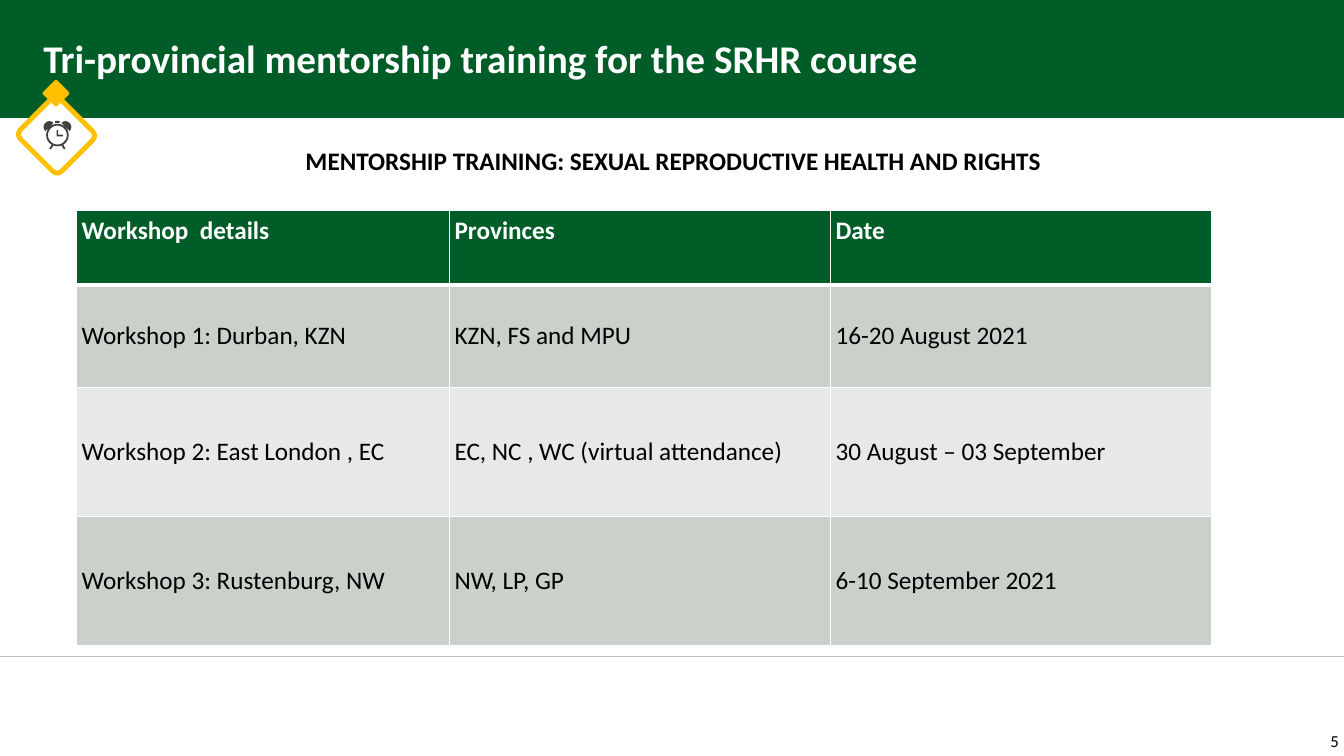
from math import cos, radians, sin

from lxml.etree import SubElement
from pptx import Presentation
from pptx.dml.color import RGBColor
from pptx.enum.shapes import MSO_CONNECTOR, MSO_SHAPE as Preset
from pptx.enum.text import MSO_ANCHOR as Anchor, PP_ALIGN as Align
from pptx.oxml.ns import qn
from pptx.util import Inches, Pt

COLORS = {key: RGBColor.from_string(value) for key, value in {
    "green": "005D28", "white": "FFFFFF", "black": "000000", "rule": "BFBFBF",
    "amber": "FFC000", "clock": "404040", "dark band": "CAD1CB", "light band": "E6E9E7",
}.items()}
INSET = Inches(0.05)

deck = Presentation()
deck.slide_width, deck.slide_height = Inches(13.33), Inches(7.5)
# The slide is a grid of 100 columns by 100 rows.
COL, ROW = deck.slide_width / 100, deck.slide_height / 100
slide = deck.slides.add_slide(deck.slide_layouts[6])
shapes = slide.shapes


def write(frame, text, size=18, color="black", bold=False, align=Align.LEFT,
          anchor=Anchor.TOP, wrap=True):
    frame.word_wrap = wrap
    frame.vertical_anchor = anchor
    frame.margin_left = frame.margin_right = INSET
    frame.margin_top = frame.margin_bottom = INSET
    paragraph = frame.paragraphs[0]
    paragraph.alignment = align
    run = paragraph.add_run()
    run.text = text
    run.font.name, run.font.size, run.font.bold = "Calibri", Pt(size), bold
    run.font.color.rgb = COLORS[color]


def arc(x, y, radius, start=0, end=360):
    """Points along a circle, angles in degrees clockwise from the right."""
    steps = 24
    angles = [radians(start + (end - start) * i / steps) for i in range(steps + 1)]
    return [(x + radius * cos(a), y + radius * sin(a)) for a in angles]


# Header band and footer rule
band = shapes.add_shape(Preset.RECTANGLE, 0, 0, deck.slide_width, int(15.6 * ROW))
band.shadow.inherit = False
band.fill.solid()
band.fill.fore_color.rgb = COLORS["green"]
band.line.fill.background()

rule_y = int(86.8 * ROW)
rule = shapes.add_connector(MSO_CONNECTOR.STRAIGHT, 0, rule_y, deck.slide_width, rule_y)
rule.line.color.rgb, rule.line.width = COLORS["rule"], Pt(0.75)
SubElement(rule._element.spPr, qn("a:effectLst"))

# Page number, title and table heading
for text, (left, top, width, height), look in [
    ("5", (98.5, 96.4, 1.5, 3.6),
     dict(size=12, align=Align.RIGHT, anchor=Anchor.BOTTOM, wrap=False)),
    ("Tri-provincial mentorship training for the SRHR course", (2.85, 0, 93.6, 15.33),
     dict(size=28, color="white", bold=True, anchor=Anchor.MIDDLE)),
    ("MENTORSHIP TRAINING: SEXUAL REPRODUCTIVE HEALTH AND RIGHTS", (5.7, 18.53, 88.8, 4.8),
     dict(bold=True, align=Align.CENTER)),
]:
    box = shapes.add_textbox(int(left * COL), int(top * ROW), int(width * COL), int(height * ROW))
    write(box.text_frame, text, **look)

# Diamond badge
for preset, (left, top, width, height), fill, weight in [
    (Preset.ROUNDED_RECTANGLE, (2.03, 14.13, 4.35, 7.47), "white", 3.5),
    (Preset.RECTANGLE, (3.53, 11.2, 1.28, 2.27), "amber", 2),
]:
    diamond = shapes.add_shape(preset, int(left * COL), int(top * ROW),
                               int(width * COL), int(height * ROW))
    diamond.shadow.inherit = False
    diamond.rotation = 45
    diamond.fill.solid()
    diamond.fill.fore_color.rgb = COLORS[fill]
    diamond.line.color.rgb, diamond.line.width = COLORS["amber"], Pt(weight)
    if preset == Preset.ROUNDED_RECTANGLE:
        diamond.adjustments[0] = 0.11

# Alarm clock, drawn in thousandths of an inch around the centre of its face
clock_x, clock_y = 570, 1340
clock_parts = [
    arc(0, 0, 112),
    arc(0, 0, 94),
    [(-8, -50), (8, -50), (8, -4), (54, -4), (54, 14), (-8, 14)],
    [(-22, -120), (-22, -140), (22, -140), (22, -120)],
    arc(-80, -80, 57, -45, -225),
    arc(80, -80, 57, -135, 45),
] + [[(side * 60, 98), (side * 82, 140), (side * 62, 140), (side * 42, 108)] for side in (-1, 1)]
outline = None
for part in clock_parts:
    points = [(clock_x + x, clock_y + y) for x, y in part]
    if outline is None:
        outline = shapes.build_freeform(*points[0], scale=Inches(1) / 1000)
    else:
        outline.move_to(*points[0])
    outline.add_line_segments(points[1:], close=True)
clock = outline.convert_to_shape()
clock.shadow.inherit = False
clock.fill.solid()
clock.fill.fore_color.rgb = COLORS["clock"]
clock.line.fill.background()

# Workshop table
workshops = [
    ("Workshop  details", "Provinces", "Date"),
    ("Workshop 1: Durban, KZN", "KZN, FS and MPU", "16-20 August 2021"),
    ("Workshop 2: East London , EC", "EC, NC , WC (virtual attendance)", "30 August – 03 September"),
    ("Workshop 3: Rustenburg, NW", "NW, LP, GP", "6-10 September 2021"),
]
col_spans = [27.75, 28.35, 28.35]
row_spans = [9.87, 13.6, 17.07, 17.07]
row_fills = ["green", "dark band", "light band", "dark band"]
table = shapes.add_table(len(row_spans), len(col_spans), int(5.7 * COL), int(27.8 * ROW),
                         int(sum(col_spans) * COL), int(sum(row_spans) * ROW)).table
for column, span in zip(table.columns, col_spans):
    column.width = int(span * COL)
for r, (workshop, span) in enumerate(zip(workshops, row_spans)):
    table.rows[r].height = int(span * ROW)
    is_header = r == 0
    for c, text in enumerate(workshop):
        cell = table.cell(r, c)
        write(cell.text_frame, text, bold=is_header, color="white" if is_header else "black")
        cell.vertical_anchor = Anchor.TOP if is_header else Anchor.MIDDLE
        cell.margin_left = cell.margin_right = INSET
        cell.margin_top = cell.margin_bottom = INSET
        for side in ("lnL", "lnR", "lnT", "lnB"):
            under_header = (r, side) in [(0, "lnB"), (1, "lnT")]
            border = SubElement(cell._tc.get_or_add_tcPr(), qn(f"a:{side}"),
                                w=str(Pt(3 if under_header else 1)))
            SubElement(SubElement(border, qn("a:solidFill")), qn("a:srgbClr"),
                       val=str(COLORS["white"]))
        cell.fill.solid()
        cell.fill.fore_color.rgb = COLORS[row_fills[r]]

deck.save("out.pptx")
